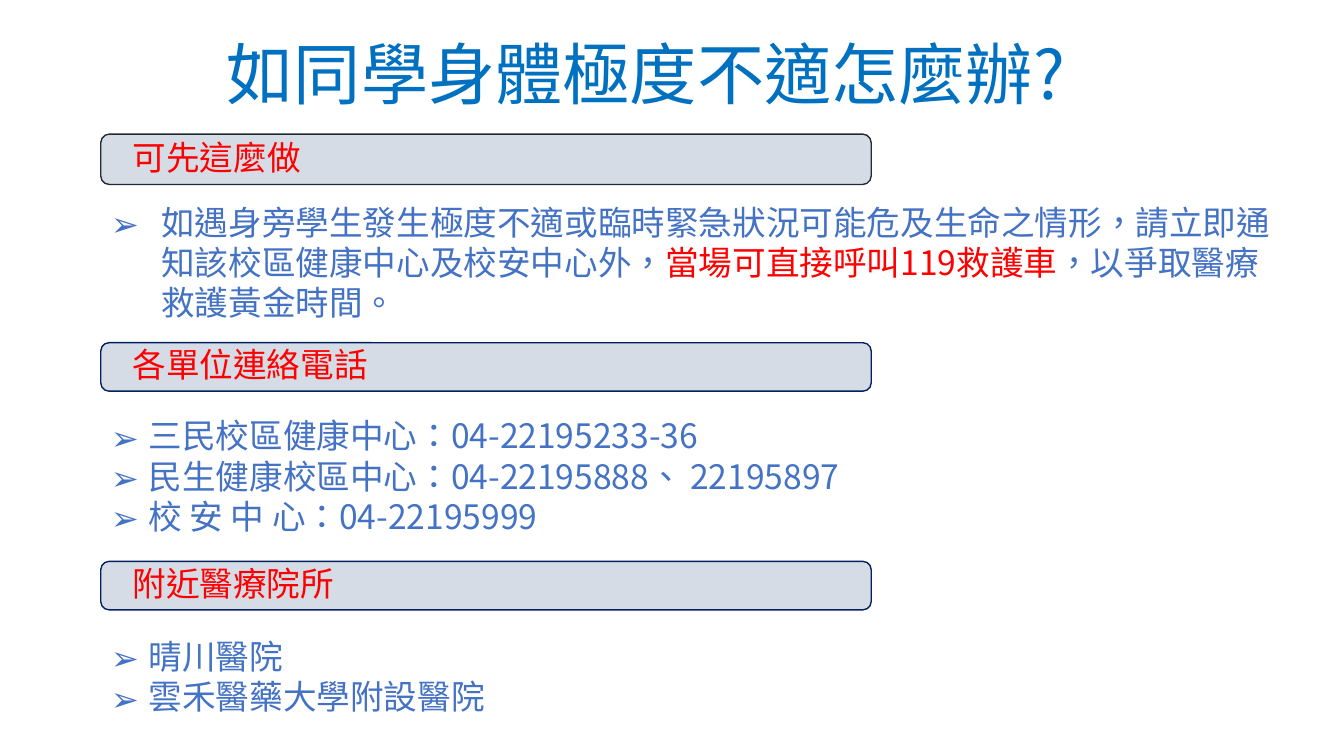
"""Build the slide on what to do when a classmate feels seriously unwell."""
from dataclasses import dataclass

from lxml.etree import SubElement
from pptx import Presentation
from pptx.dml.color import RGBColor
from pptx.enum.shapes import MSO_SHAPE
from pptx.enum.text import MSO_ANCHOR, PP_ALIGN
from pptx.oxml.ns import qn
from pptx.util import Pt

FONT = "Noto Sans CJK JP"
TITLE_BLUE = RGBColor(0x00, 0x70, 0xC0)
BODY_BLUE = RGBColor(0x44, 0x72, 0xC4)
RED = RGBColor(0xFF, 0x00, 0x00)
PALE_GREY = RGBColor(0xD6, 0xDC, 0xE5)
SLATE = RGBColor(0x22, 0x2A, 0x35)
NAVY = RGBColor(0x00, 0x20, 0x60)
LEFT = 72
LINE_HEIGHT = 28.8


@dataclass
class Section:
    """Describe one heading bar and the list below it, in points."""
    heading: str
    bar_top: float
    bar_height: float
    bar_line: RGBColor
    placeholder: int
    list_top: float
    list_width: float
    list_height: float
    indent: float
    items: list


SECTIONS = [
    Section("可先這麼做", 95.8, 36, SLATE, 1, 140.4, 856.8, 94.3, 36, [
        [("如遇身旁學生發生極度不適或臨時緊急狀況可能危及生命之情形，"
          "請立即通知該校區健康中心及校安中心外，", BODY_BLUE),
         ("當場可直接呼叫119救護車", RED),
         ("，以爭取醫療救護黃金時間。", BODY_BLUE)]]),
    Section("各單位連絡電話", 244.8, 34.6, NAVY, 2, 293, 568, 94.3, 27, [
        [("三民校區健康中心：04-22195233-36", BODY_BLUE)],
        [("民生健康校區中心：04-22195888、 22195897", BODY_BLUE)],
        [("校 安 中 心：04-22195999", BODY_BLUE)]]),
    Section("附近醫療院所", 401, 34.6, NAVY, 4, 450.7, 480.2, 65.5, 27, [
        [("晴川醫院", BODY_BLUE)],
        [("雲禾醫藥大學附設醫院", BODY_BLUE)]]),
]


def apply(target, formats: dict) -> None:
    """Set each named attribute of the target."""
    for name, value in formats.items():
        setattr(target, name, value)


def place(shape, left: float, top: float, width: float, height: float) -> None:
    """Move and size a shape in points."""
    apply(shape, {"left": Pt(left), "top": Pt(top),
                  "width": Pt(width), "height": Pt(height)})


def add_text(paragraph, text: str, size: float, color: RGBColor) -> None:
    """Add a Traditional Chinese run in the slide font."""
    run = paragraph.add_run()
    run.text = text
    apply(run.font, {"name": FONT, "size": Pt(size), "bold": False})
    run.font.color.rgb = color
    properties = run.font._element
    properties.set("lang", "zh-TW")
    SubElement(properties, qn("a:ea"), typeface=FONT)


def add_title(slide, text: str) -> None:
    """Fill and place the title."""
    title = slide.shapes.title
    place(title, 154.8, 21.6, 620, 60.5)
    apply(title.text_frame, {"vertical_anchor": MSO_ANCHOR.MIDDLE,
                             "word_wrap": True, "margin_right": 0})
    paragraph = title.text_frame.paragraphs[0]
    paragraph.alignment = PP_ALIGN.LEFT
    add_text(paragraph, text, 48, TITLE_BLUE)


def add_bar(slide, section: Section) -> None:
    """Draw the rounded heading bar of a section."""
    bar = slide.shapes.add_shape(
        MSO_SHAPE.ROUNDED_RECTANGLE, Pt(LEFT), Pt(section.bar_top),
        Pt(550.3), Pt(section.bar_height))
    bar.adjustments[0] = 0.17
    bar.shadow.inherit = False
    bar.fill.solid()
    bar.fill.fore_color.rgb = PALE_GREY
    bar.line.color.rgb = section.bar_line
    bar.line.width = Pt(1)
    apply(bar.text_frame, {
        "vertical_anchor": MSO_ANCHOR.MIDDLE, "word_wrap": True,
        "margin_left": Pt(21), "margin_right": Pt(21),
        "margin_top": Pt(1.5), "margin_bottom": Pt(1.5)})
    paragraph = bar.text_frame.paragraphs[0]
    apply(paragraph, {"alignment": PP_ALIGN.LEFT, "line_spacing": 0.9})
    add_text(paragraph, section.heading, 24, RED)


def add_list(slide, section: Section) -> None:
    """Fill the section's body placeholder with arrow-bulleted items."""
    body = next(shape for shape in slide.placeholders
                if shape.placeholder_format.idx == section.placeholder)
    place(body, LEFT, section.list_top, section.list_width, section.list_height)
    frame = body.text_frame
    apply(frame, {"vertical_anchor": MSO_ANCHOR.TOP, "word_wrap": True})
    for number, item in enumerate(section.items):
        paragraph = frame.add_paragraph() if number else frame.paragraphs[0]
        apply(paragraph, {"level": 1, "alignment": PP_ALIGN.LEFT,
                          "line_spacing": Pt(LINE_HEIGHT),
                          "space_before": Pt(0), "space_after": Pt(0)})
        properties = paragraph._p.get_or_add_pPr()
        properties.set("marL", str(Pt(section.indent)))
        properties.set("indent", str(-Pt(section.indent)))
        SubElement(properties, qn("a:buFont"), typeface=FONT)
        SubElement(properties, qn("a:buChar"), char="➢")
        for text, color in item:
            add_text(paragraph, text, 24, color)


def main() -> None:
    """Build and save the presentation."""
    presentation = Presentation()
    apply(presentation, {"slide_width": Pt(960), "slide_height": Pt(540)})
    slide = presentation.slides.add_slide(presentation.slide_layouts[4])
    add_title(slide, "如同學身體極度不適怎麼辦?")
    for section in SECTIONS:
        add_bar(slide, section)
        add_list(slide, section)
    for shape in list(slide.placeholders):
        if not shape.text_frame.text:
            shape._element.getparent().remove(shape._element)
    presentation.save("out.pptx")


if __name__ == "__main__":
    main()
